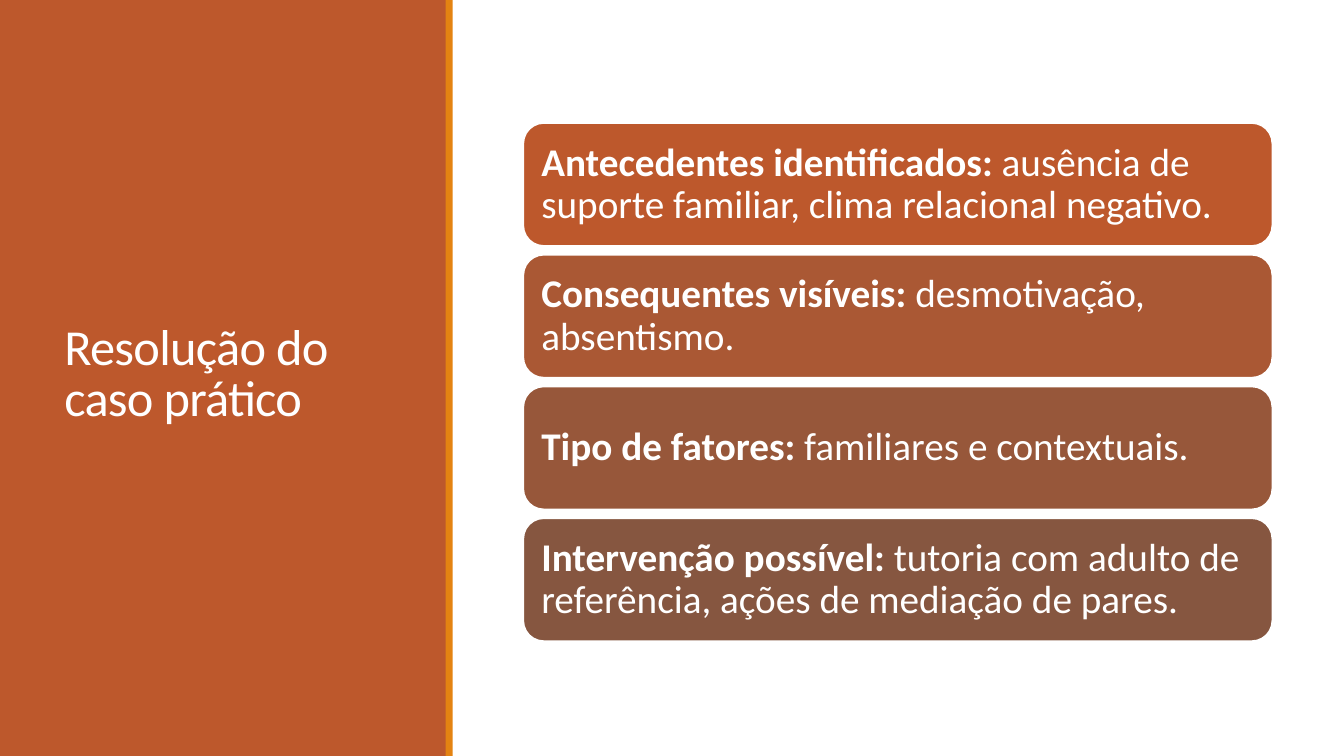
import pptx
import pptx.util
import pptx.dml.color
import pptx.enum.shapes
import pptx.enum.text

Inches = pptx.util.Inches
RGBColor = pptx.dml.color.RGBColor
Shapes = pptx.enum.shapes.MSO_SHAPE

WHITE = RGBColor(0xFF, 0xFF, 0xFF)
RUST = RGBColor(0xBD, 0x58, 0x2C)
ORANGE = RGBColor(0xE4, 0x83, 0x12)
SIENNA = RGBColor(0xAA, 0x58, 0x34)
BROWN = RGBColor(0x97, 0x57, 0x3A)
UMBER = RGBColor(0x86, 0x56, 0x40)

CARDS = [
    (RUST, "Antecedentes identificados:", " ausência de suporte familiar, clima relacional negativo."),
    (SIENNA, "Consequentes visíveis:", " desmotivação, absentismo."),
    (BROWN, "Tipo de fatores:", " familiares e contextuais."),
    (UMBER, "Intervenção possível:", " tutoria com adulto de referência, ações de mediação de pares."),
]
CARD_TOP = 1.22
CARD_HEIGHT = 1.22
CARD_STEP = 1.307


class SlideBuilder:
    font = "Calibri"
    color = WHITE

    def __init__(self, page):
        self.page = page

    def shape(self, kind, left, top, width, height, fill):
        shape = self.page.shapes.add_shape(
            kind, Inches(left), Inches(top), Inches(width), Inches(height))
        shape.shadow.inherit = False
        shape.fill.solid()
        shape.fill.fore_color.rgb = fill
        shape.line.fill.background()
        return shape

    def text(self, frame, runs, size, line_spacing, inset):
        frame.word_wrap = True
        frame.vertical_anchor = pptx.enum.text.MSO_ANCHOR.MIDDLE
        frame.margin_left = frame.margin_right = Inches(inset)
        frame.margin_top = frame.margin_bottom = Inches(inset)
        para = frame.paragraphs[0]
        para.alignment = pptx.enum.text.PP_ALIGN.LEFT
        para.line_spacing = line_spacing
        for words, bold in runs:
            span = para.add_run()
            span.text = words
            span.font.name = self.font
            span.font.size = pptx.util.Pt(size)
            span.font.bold = bold
            span.font.color.rgb = self.color
        return para

    def title(self, words, left, top, width, height):
        box = self.page.shapes.add_textbox(
            Inches(left), Inches(top), Inches(width), Inches(height))
        para = self.text(box.text_frame, [(words, False)], 36, 0.85, 0.1)
        para.runs[0].font._element.set("spc", "-50")

    def card(self, top, fill, label, detail):
        card = self.shape(Shapes.ROUNDED_RECTANGLE, 5.19, top, 7.43, CARD_HEIGHT, fill)
        card.line.color.rgb = WHITE
        card.line.width = pptx.util.Pt(1.25)
        self.text(card.text_frame, [(label, True), (detail, False)], 28, 0.9, 0.12)


def main():
    deck = pptx.Presentation()
    deck.slide_width = Inches(13.33)
    deck.slide_height = Inches(7.5)
    builder = SlideBuilder(deck.slides.add_slide(deck.slide_layouts[6]))
    builder.shape(Shapes.RECTANGLE, 0, 0, 4.43, 7.5, RUST)
    builder.title("Resolução do caso prático", 0.54, 0.57, 3.37, 6.31)
    builder.shape(Shapes.RECTANGLE, 4.42, 0, 0.07, 7.5, ORANGE)
    for index, (fill, label, detail) in enumerate(CARDS):
        builder.card(CARD_TOP + index * CARD_STEP, fill, label, detail)
    deck.save("out.pptx")


if __name__ == "__main__":
    main()
